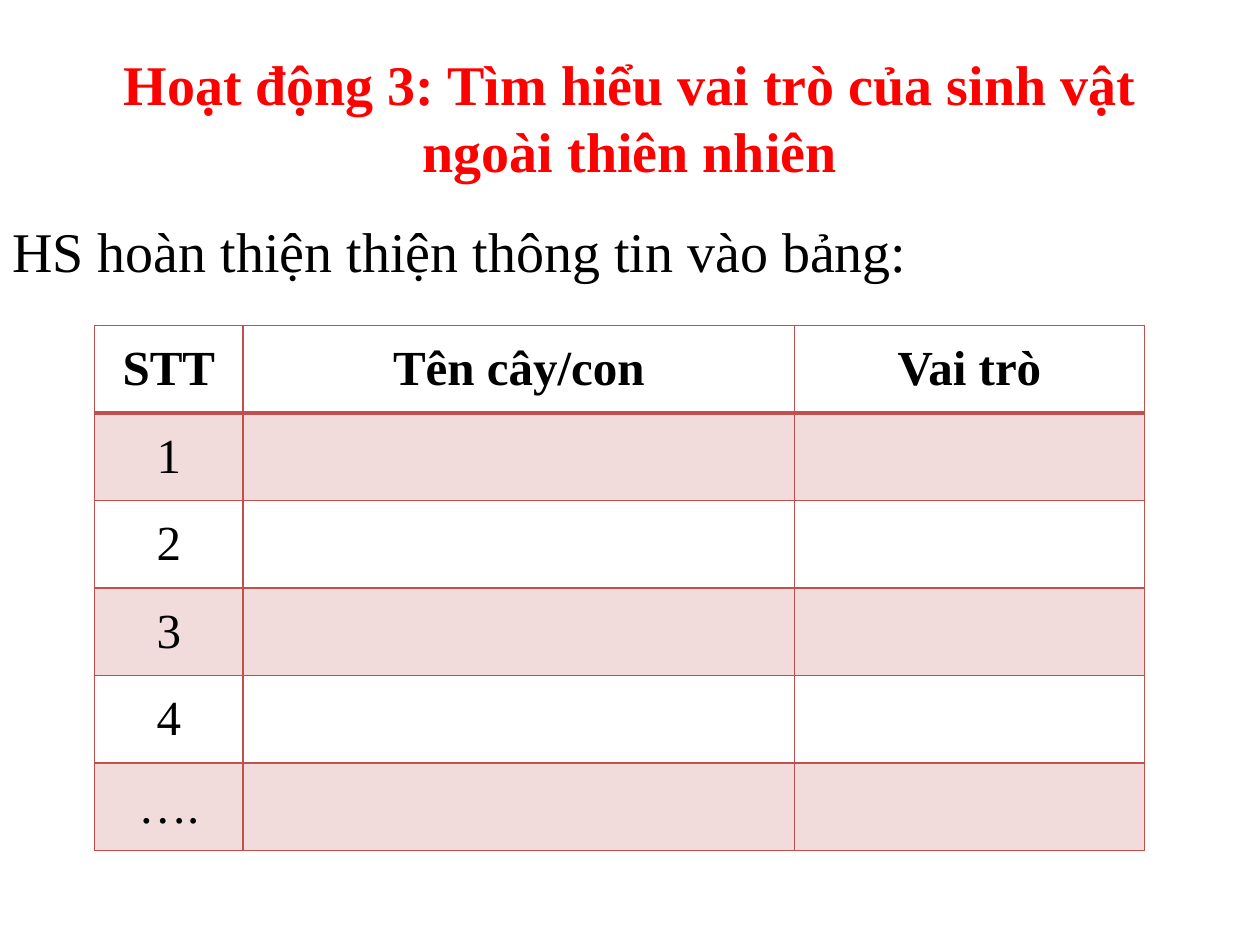
from lxml import etree
from pptx import Presentation
from pptx.dml.color import RGBColor
from pptx.enum.text import MSO_ANCHOR, PP_ALIGN
from pptx.oxml.ns import qn
from pptx.util import Pt

CENTER, JUSTIFY = PP_ALIGN.CENTER, PP_ALIGN.JUSTIFY
TOP, MIDDLE = MSO_ANCHOR.TOP, MSO_ANCHOR.MIDDLE
TITLE_ONLY = 5
COLORS = {"title": "FF0000", "text": "000000", "accent": "C0504D"}
HEADS = ["STT", "Tên cây/con", "Vai trò"]
LABELS = ["1", "2", "3", "4", "…."]


class Deck:
    """Holds the style and the current slide."""

    font = "Times New Roman"

    def __init__(self, wide, high):
        self.prs = Presentation()
        self.prs.slide_width, self.prs.slide_height = Pt(wide), Pt(high)
        self.slide = self.prs.slides.add_slide(self.prs.slide_layouts[TITLE_ONLY])

    def put(self, frame, text, size, align, color="text", bold=False):
        """Set the frame's only paragraph and its font."""
        para = frame.paragraphs[0]
        para.text = text
        para.alignment = align
        font = para.font
        font.name, font.size, font.bold = self.font, Pt(size), bold
        font.color.rgb = RGBColor.from_string(COLORS[color])

    def title(self, text, left, top, wide, high):
        shape = self.slide.shapes.title
        shape.left, shape.top = Pt(left), Pt(top)
        shape.width, shape.height = Pt(wide), Pt(high)
        shape.text_frame.vertical_anchor = MIDDLE
        self.put(shape.text_frame, text, 32, CENTER, "title", True)

    def text(self, text, left, top, wide, high):
        box = self.slide.shapes.add_textbox(Pt(left), Pt(top), Pt(wide), Pt(high))
        frame = box.text_frame
        frame.word_wrap = True
        frame.vertical_anchor = TOP
        self.put(frame, text, 32, JUSTIFY)

    def border(self, cell, side, width):
        props = cell._tc.get_or_add_tcPr()
        line = etree.SubElement(props, qn(f"a:ln{side}"), w=str(Pt(width)))
        fill = etree.SubElement(line, qn("a:solidFill"))
        etree.SubElement(fill, qn("a:srgbClr"), val=COLORS["accent"])

    def tint(self, cell, percent):
        """Fill the cell with the accent colour at the given opacity."""
        cell.fill.solid()
        cell.fill.fore_color.rgb = RGBColor.from_string(COLORS["accent"])
        color = cell._tc.tcPr.find(qn("a:solidFill")).find(qn("a:srgbClr"))
        etree.SubElement(color, qn("a:alpha"), val=str(percent * 1000))

    def table(self, rows, left, top, widths, high):
        """Draw a grid with a bold head row and every other body row tinted."""
        table = self.slide.shapes.add_table(
            len(rows), len(widths), Pt(left), Pt(top), Pt(sum(widths)), Pt(high * len(rows))
        ).table
        for col, wide in zip(table.columns, widths):
            col.width = Pt(wide)
        for r, row in enumerate(rows):
            table.rows[r].height = Pt(high)
            for c, text in enumerate(row):
                cell = table.cell(r, c)
                cell.vertical_anchor = MIDDLE
                for side in "LRTB":
                    heavy = (r, side) in ((0, "B"), (1, "T"))
                    self.border(cell, side, 2 if heavy else 1)
                if r % 2:
                    self.tint(cell, 20)
                else:
                    cell.fill.background()
                self.put(cell.text_frame, text, 28, CENTER, bold=r == 0)


def main():
    deck = Deck(720, 540)
    deck.title("Hoạt động 3: Tìm hiểu vai trò của sinh vật ngoài thiên nhiên", 36, 21.6, 648, 90)
    deck.text("HS hoàn thiện thiện thông tin vào bảng:", 0, 120, 720, 420)
    rows = [HEADS] + [[label, "", ""] for label in LABELS]
    deck.table(rows, 54, 186, [85, 315, 200], 50)
    deck.prs.save("out.pptx")


if __name__ == "__main__":
    main()
